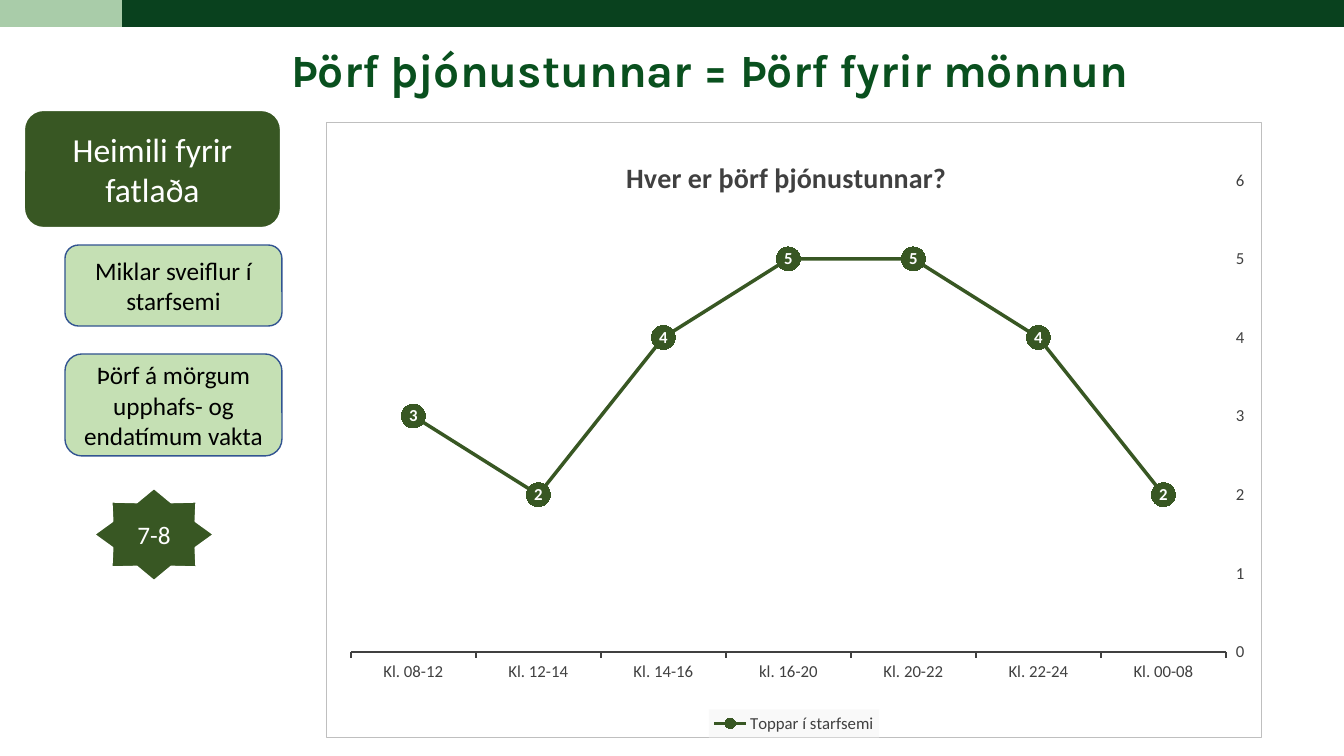
from pptx import Presentation
from pptx import util as u
from pptx.chart import data
from pptx.dml.color import RGBColor
from pptx.enum import chart as ch, shapes, text
from pptx.oxml import parse_xml
from pptx.oxml.ns import nsdecls

DARK_BAR = RGBColor(0x09, 0x41, 0x1E)
PALE_BAR = RGBColor(0xA9, 0xCC, 0xA9)
TITLE_GREEN = RGBColor(0x09, 0x50, 0x1E)
GREEN = RGBColor(0x38, 0x57, 0x23)
PALE_GREEN = RGBColor(0xC5, 0xE0, 0xB4)
BLUE = RGBColor(0x32, 0x54, 0x91)
GREY = RGBColor(0x40, 0x40, 0x40)
BORDER = RGBColor(0xBF, 0xBF, 0xBF)
LEGEND_GREY = RGBColor(0xF9, 0xF9, 0xF9)
WHITE = RGBColor(0xFF, 0xFF, 0xFF)
BLACK = RGBColor(0, 0, 0)

HOURS = ["Kl. 08-12", "Kl. 12-14", "Kl. 14-16", "kl. 16-20", "Kl. 20-22", "Kl. 22-24", "Kl. 00-08"]
NEED = [3, 2, 4, 5, 5, 4, 2]


class StaffingSlide:
    """Hold the style and the current slide, and add elements given in px."""

    body_font = "Calibri"
    title_font = "Karla"
    scale = 914400 / 100.8

    def __init__(self, presentation, width, height):
        presentation.slide_width, presentation.slide_height = self.px(width, height)
        self.slide = presentation.slides.add_slide(presentation.slide_layouts[5])

    def px(self, *lengths):
        return [u.Emu(round(length * self.scale)) for length in lengths]

    def style(self, font, size, color, bold=False, name=body_font):
        font.name, font.size, font.bold = name, u.Pt(size), bold
        font.color.rgb = color

    def title(self, words, *box):
        shape = self.slide.shapes.title
        shape.left, shape.top, shape.width, shape.height = self.px(*box)
        frame = shape.text_frame
        frame.text = words
        frame.word_wrap = True
        frame.auto_size = text.MSO_AUTO_SIZE.NONE
        frame.vertical_anchor = text.MSO_ANCHOR.TOP
        paragraph = frame.paragraphs[0]
        paragraph.alignment = text.PP_ALIGN.LEFT
        paragraph.line_spacing = 0.9
        self.style(paragraph.runs[0].font, 33, TITLE_GREEN, True, self.title_font)

    def shape(self, kind, box, fill, line=None, line_width=1.5):
        shape = self.slide.shapes.add_shape(kind, *self.px(*box))
        shape.shadow.inherit = False
        shape.fill.solid()
        shape.fill.fore_color.rgb = fill
        if line is None:
            shape.line.fill.background()
        else:
            shape.line.color.rgb = line
            shape.line.width = u.Pt(line_width)
        return shape

    def label(self, kind, box, words, size, fill, line, line_width, color):
        shape = self.shape(kind, box, fill, line, line_width)
        frame = shape.text_frame
        frame.text = words
        frame.word_wrap = True
        frame.vertical_anchor = text.MSO_ANCHOR.MIDDLE
        paragraph = frame.paragraphs[0]
        paragraph.alignment = text.PP_ALIGN.CENTER
        self.style(paragraph.runs[0].font, size, color)

    def layout(self, parent, index, target="", **fractions):
        for layout in parent.xpath("c:layout"):
            parent.remove(layout)
        modes = '<c:xMode val="edge"/><c:yMode val="edge"/>'
        values = "".join(f'<c:{key} val="{value}"/>' for key, value in fractions.items())
        parent.insert(index, parse_xml(
            f'<c:layout {nsdecls("c")}><c:manualLayout>{target}{modes}{values}'
            '</c:manualLayout></c:layout>'))

    def surface(self, previous, fill, line=None):
        outline = "<a:noFill/>" if line is None else (
            f'<a:solidFill><a:srgbClr val="{line}"/></a:solidFill>')
        previous.addnext(parse_xml(
            f'<c:spPr {nsdecls("c", "a")}><a:solidFill><a:srgbClr val="{fill}"/></a:solidFill>'
            f'<a:ln w="9525">{outline}</a:ln></c:spPr>'))

    def chart(self, heading, name, categories, values, *box):
        chart_data = data.CategoryChartData()
        chart_data.categories = categories
        chart_data.add_series(name, values)
        chart = self.slide.shapes.add_chart(
            ch.XL_CHART_TYPE.LINE_MARKERS, *self.px(*box), chart_data).chart
        self.style(chart.font, 10, BLACK)
        self.surface(chart.element.xpath("c:chart")[0], WHITE, BORDER)
        self.layout(chart.element.xpath("c:chart/c:plotArea")[0], 0,
                    '<c:layoutTarget val="inner"/>', x=0.026, y=0.094, w=0.936, h=0.767)

        chart.has_title = True
        frame = chart.chart_title.text_frame
        frame.text = heading
        self.style(frame.paragraphs[0].runs[0].font, 20, GREY, True)
        self.layout(chart.element.xpath("c:chart/c:title")[0], 1, x=0.315, y=0.05)

        chart.has_legend = True
        chart.legend.position = ch.XL_LEGEND_POSITION.BOTTOM
        chart.legend.include_in_layout = False
        self.style(chart.legend.font, 12, GREY)
        self.surface(chart.element.xpath("c:chart/c:legend/c:overlay")[0], LEGEND_GREY)

        self.axes(chart)
        self.series(chart.plots[0])

    def axes(self, chart):
        for axis in (chart.category_axis, chart.value_axis):
            axis.has_major_gridlines = False
            axis.major_tick_mark = ch.XL_TICK_MARK.OUTSIDE
            self.style(axis.tick_labels.font, 12, GREY)
        hours, need = chart.category_axis, chart.value_axis
        hours.format.line.color.rgb = GREY
        hours.format.line.width = u.Pt(1.5)
        hours.crosses = ch.XL_AXIS_CROSSES.MAXIMUM
        need.format.line.fill.background()
        need.tick_label_position = ch.XL_TICK_LABEL_POSITION.HIGH
        need.minimum_scale, need.maximum_scale, need.major_unit = 0, 6, 1

    def series(self, plot):
        plot.vary_by_categories = False
        series = plot.series[0]
        series.smooth = False
        series.format.line.color.rgb = GREEN
        series.format.line.width = u.Pt(2.5)
        marker = series.marker
        marker.style, marker.size = ch.XL_MARKER_STYLE.CIRCLE, 17
        marker.format.fill.solid()
        marker.format.fill.fore_color.rgb = GREEN
        marker.format.line.fill.background()
        labels = series.data_labels
        labels.show_value = True
        labels.position = ch.XL_LABEL_POSITION.CENTER
        self.style(labels.font, 12, WHITE, True)


def main():
    presentation = Presentation()
    slide = StaffingSlide(presentation, 1344, 756)
    kinds = shapes.MSO_SHAPE

    slide.shape(kinds.RECTANGLE, (122, 0, 1222, 27), DARK_BAR)
    slide.shape(kinds.RECTANGLE, (0, 0, 122, 27), PALE_BAR)
    slide.title("Þörf þjónustunnar = Þörf fyrir mönnun", 281, 43, 1092, 87)
    slide.chart("Hver er þörf þjónustunnar?", "Toppar í starfsemi", HOURS, NEED, 326, 122, 936, 616)

    strong = (GREEN, WHITE, 1.5, WHITE)
    soft = (PALE_GREEN, BLUE, 1, BLACK)
    for kind, box, words, size, look in (
        (kinds.ROUNDED_RECTANGLE, (24, 110, 257, 118), "Heimili fyrir fatlaða", 24, strong),
        (kinds.STAR_8_POINT, (94, 488, 120, 93), "7-8", 18, strong),
        (kinds.ROUNDED_RECTANGLE, (65, 245, 217, 81), "Miklar sveiflur í starfsemi", 18, soft),
        (kinds.ROUNDED_RECTANGLE, (65, 354, 217, 102),
         "Þörf á mörgum upphafs- og endatímum vakta", 18, soft),
    ):
        slide.label(kind, box, words, size, *look)

    presentation.save("out.pptx")


if __name__ == "__main__":
    main()
